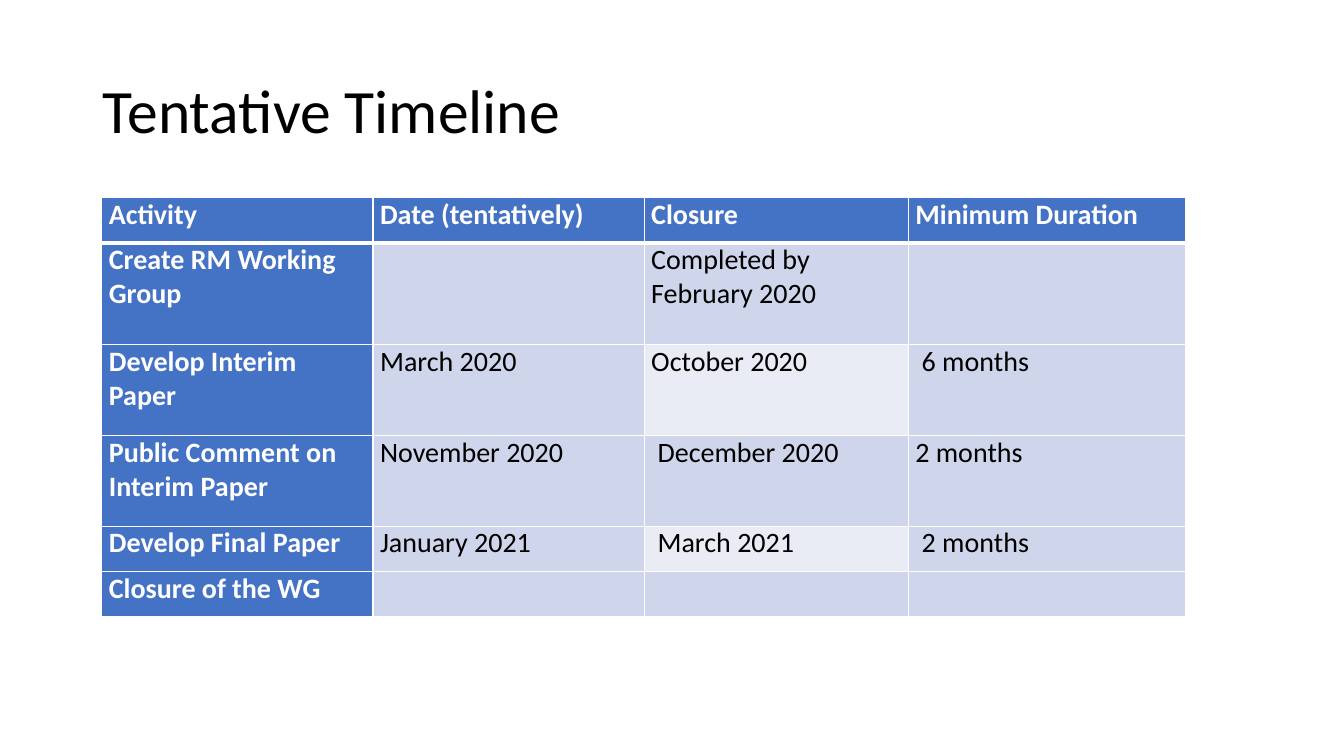
from lxml import etree
from pptx import Presentation
from pptx.dml.color import RGBColor
from pptx.enum.text import MSO_ANCHOR, PP_ALIGN
from pptx.oxml.ns import qn
from pptx.util import Inches, Pt

MIDDLE = MSO_ANCHOR.MIDDLE
LEFT = PP_ALIGN.LEFT

TITLE = "Tentative Timeline"
TIMELINE = [
    ("Activity", "Date (tentatively)", "Closure", "Minimum Duration"),
    ("Create RM Working Group", "", "Completed by February 2020", ""),
    ("Develop Interim Paper", "March 2020", "October 2020", " 6 months"),
    ("Public Comment on Interim Paper", "November 2020", " December 2020", "2 months"),
    ("Develop Final Paper", "January 2021", " March 2021", " 2 months"),
    ("Closure of the WG", "", "", ""),
]
COLUMN_WIDTHS = [2.69, 2.69, 2.62, 2.75]
ROW_HEIGHTS = [0.45, 1.01, 0.9, 0.9, 0.45, 0.45]
LIGHT_CELLS = {(2, 2), (4, 2)}

FONT = "Calibri"
BLACK, WHITE = "000000", "FFFFFF"
HEADING_FILL, BODY_FILL, LIGHT_FILL = "4472C4", "CFD5EA", "E9EBF5"


def color(hex_value):
    return RGBColor.from_string(hex_value)


def set_font(paragraph, size, hex_value, bold=False):
    font = paragraph.font
    font.name, font.size, font.bold = FONT, Pt(size), bold
    font.color.rgb = color(hex_value)


def add_borders(cell, widths):
    """Draw white cell borders; widths maps a side (L, R, T, B) to points."""
    properties = cell._tc.get_or_add_tcPr()
    for side, width in widths.items():
        line = etree.SubElement(properties, qn(f"a:ln{side}"), w=str(Pt(width)))
        fill = etree.SubElement(line, qn("a:solidFill"))
        etree.SubElement(fill, qn("a:srgbClr"), val=WHITE)


def fill_cell(cell, row, column, text):
    heading = row == 0 or column == 0
    add_borders(cell, {"L": 1, "R": 1, "T": 3 if row == 1 else 1, "B": 3 if row == 0 else 1})
    if heading:
        fill = HEADING_FILL
    else:
        fill = LIGHT_FILL if (row, column) in LIGHT_CELLS else BODY_FILL
    cell.fill.solid()
    cell.fill.fore_color.rgb = color(fill)
    if text:
        cell.margin_left = cell.margin_right = Inches(0.07)
        cell.margin_top = cell.margin_bottom = 0
        cell.text = text
        set_font(cell.text_frame.paragraphs[0], 20, WHITE if heading else BLACK, heading)


def main():
    prs = Presentation()
    prs.slide_width, prs.slide_height = Inches(13.33), Inches(7.5)
    slide = prs.slides.add_slide(prs.slide_layouts[5])

    title = slide.shapes.title
    title.left, title.top = Inches(0.92), Inches(0.4)
    title.width, title.height = Inches(11.5), Inches(1.45)
    title.text = TITLE
    title.text_frame.vertical_anchor = MIDDLE
    heading = title.text_frame.paragraphs[0]
    heading.alignment, heading.line_spacing = LEFT, 0.9
    set_font(heading, 44, BLACK)

    table = slide.shapes.add_table(
        len(TIMELINE), len(COLUMN_WIDTHS), Inches(1.01), Inches(1.96),
        Inches(sum(COLUMN_WIDTHS)), Inches(sum(ROW_HEIGHTS))).table
    for column, width in zip(table.columns, COLUMN_WIDTHS):
        column.width = Inches(width)
    for row, height in zip(table.rows, ROW_HEIGHTS):
        row.height = Inches(height)
    for row, texts in enumerate(TIMELINE):
        for column, text in enumerate(texts):
            fill_cell(table.cell(row, column), row, column, text)

    prs.save("out.pptx")


if __name__ == "__main__":
    main()
